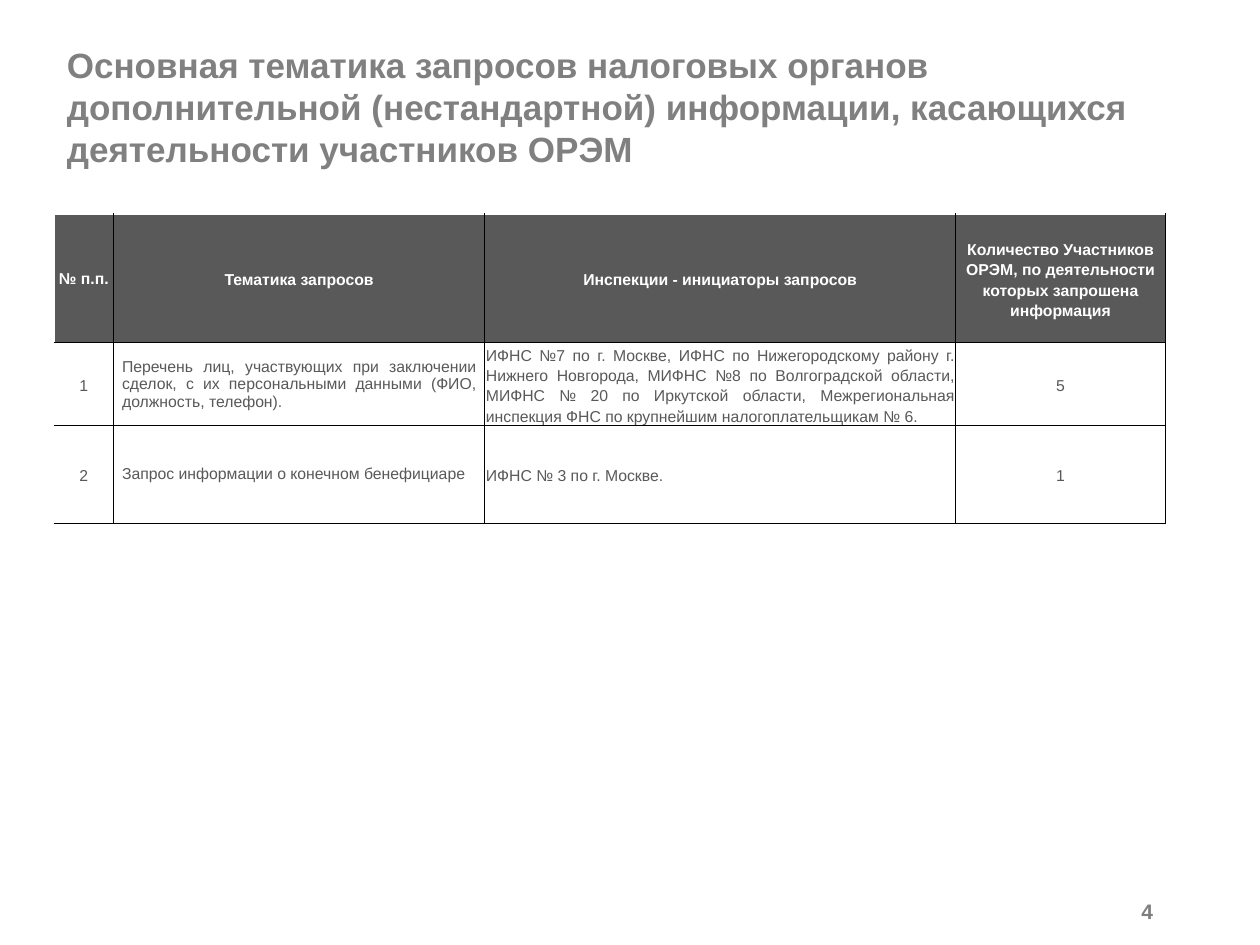
"""Build the slide on tax authority requests about market participants."""
from lxml.etree import SubElement
from pptx import Presentation
from pptx.dml.color import RGBColor
from pptx.enum.text import MSO_ANCHOR, MSO_AUTO_SIZE, PP_ALIGN
from pptx.oxml.ns import qn
from pptx.util import Pt

TITLE = ("Основная тематика запросов налоговых органов дополнительной "
         "(нестандартной) информации, касающихся деятельности участников ОРЭМ")
PAGE_NUMBER = "4"
REQUESTS = [
    ("№ п.п.", "Тематика запросов", "Инспекции - инициаторы запросов",
     "Количество Участников ОРЭМ, по деятельности которых запрошена информация"),
    ("1",
     "Перечень лиц, участвующих при заключении сделок, с их персональными "
     "данными (ФИО, должность, телефон).",
     "ИФНС №7 по г. Москве, ИФНС по Нижегородскому району г. Нижнего Новгорода, "
     "МИФНС №8 по Волгоградской области, МИФНС № 20 по Иркутской области, "
     "Межрегиональная инспекция ФНС по крупнейшим налогоплательщикам № 6.",
     "5"),
    ("2", "Запрос информации о конечном бенефициаре", "ИФНС № 3 по г. Москве.", "1"),
]
COLORS = {"title": "808080", "page": "7F7F7F", "header": "595959",
          "body": "595959", "paper": "FFFFFF", "grid": "000000"}
LEFT, WIDTH = 31, 635
COLUMN_WIDTHS = (33.8, 212.2, 269, 120)
ROW_HEIGHTS = (73.5, 47.5, 55.5)
TIGHT, ROOMY = (0.7, 0.7, 0.7, 0), (5, 0, 5, 0)
CENTER, JUSTIFY = PP_ALIGN.CENTER, PP_ALIGN.JUSTIFY
BODY_ALIGNS = (CENTER, JUSTIFY, JUSTIFY, CENTER)


def apply(target, formats):
    for name, value in formats.items():
        setattr(target, name, value)


def write(frame, words, size, color, bold, **formats):
    frame.text = words
    paragraph = frame.paragraphs[0]
    apply(paragraph, formats)
    font = paragraph.runs[0].font
    apply(font, {"name": "Arial", "size": Pt(size), "bold": bold})
    font.color.rgb = RGBColor.from_string(COLORS[color])


def draw_borders(cell, sides):
    properties = cell._tc.get_or_add_tcPr()
    for side in sides:
        border = SubElement(properties, qn(f"a:ln{side}"), w=str(Pt(0.5)))
        fill = SubElement(border, qn("a:solidFill"))
        SubElement(fill, qn("a:srgbClr"), val=COLORS["grid"])


def fill_cell(cell, words, row, column):
    header = row == 0
    insets = TIGHT if header or column == 2 else ROOMY
    margins = ("margin_left", "margin_top", "margin_right", "margin_bottom")
    apply(cell, dict(zip(margins, map(Pt, insets))))
    cell.vertical_anchor = MSO_ANCHOR.MIDDLE
    single = (header and column == 0) or (not header and column == 1)
    write(cell.text_frame, words, 9, "paper" if header else "body", header,
          alignment=CENTER if header else BODY_ALIGNS[column],
          line_spacing=1.0 if single else 1.15)
    draw_borders(cell, ["L"] * (column > 0) + ["R"] + ["T"] * (row > 0) + ["B"])
    cell.fill.solid()
    cell.fill.fore_color.rgb = RGBColor.from_string(COLORS["header" if header else "paper"])


def main():
    deck = Presentation()
    apply(deck, {"slide_width": Pt(720), "slide_height": Pt(540)})
    slide = deck.slides.add_slide(deck.slide_layouts[5])
    frame_format = {"word_wrap": True, "auto_size": MSO_AUTO_SIZE.NONE,
                    "vertical_anchor": MSO_ANCHOR.MIDDLE}

    title = slide.shapes.title
    apply(title, {"left": Pt(LEFT), "top": Pt(21.6), "width": Pt(WIDTH), "height": Pt(78.5)})
    apply(title.text_frame, frame_format)
    write(title.text_frame, TITLE, 20, "title", True, alignment=PP_ALIGN.LEFT)

    page = slide.shapes.add_textbox(Pt(587), Pt(508.3), Pt(79), Pt(24.5))
    apply(page.text_frame, frame_format)
    write(page.text_frame, PAGE_NUMBER, 12, "page", True, alignment=PP_ALIGN.RIGHT)

    table = slide.shapes.add_table(len(REQUESTS), len(COLUMN_WIDTHS), Pt(LEFT), Pt(122.4),
                                   Pt(WIDTH), Pt(sum(ROW_HEIGHTS))).table
    apply(table, {"first_row": False, "horz_banding": False})
    for column, width in zip(table.columns, COLUMN_WIDTHS):
        column.width = Pt(width)
    for row, (request, height) in enumerate(zip(REQUESTS, ROW_HEIGHTS)):
        table.rows[row].height = Pt(height)
        for column, words in enumerate(request):
            fill_cell(table.cell(row, column), words, row, column)

    deck.save("out.pptx")


if __name__ == "__main__":
    main()
